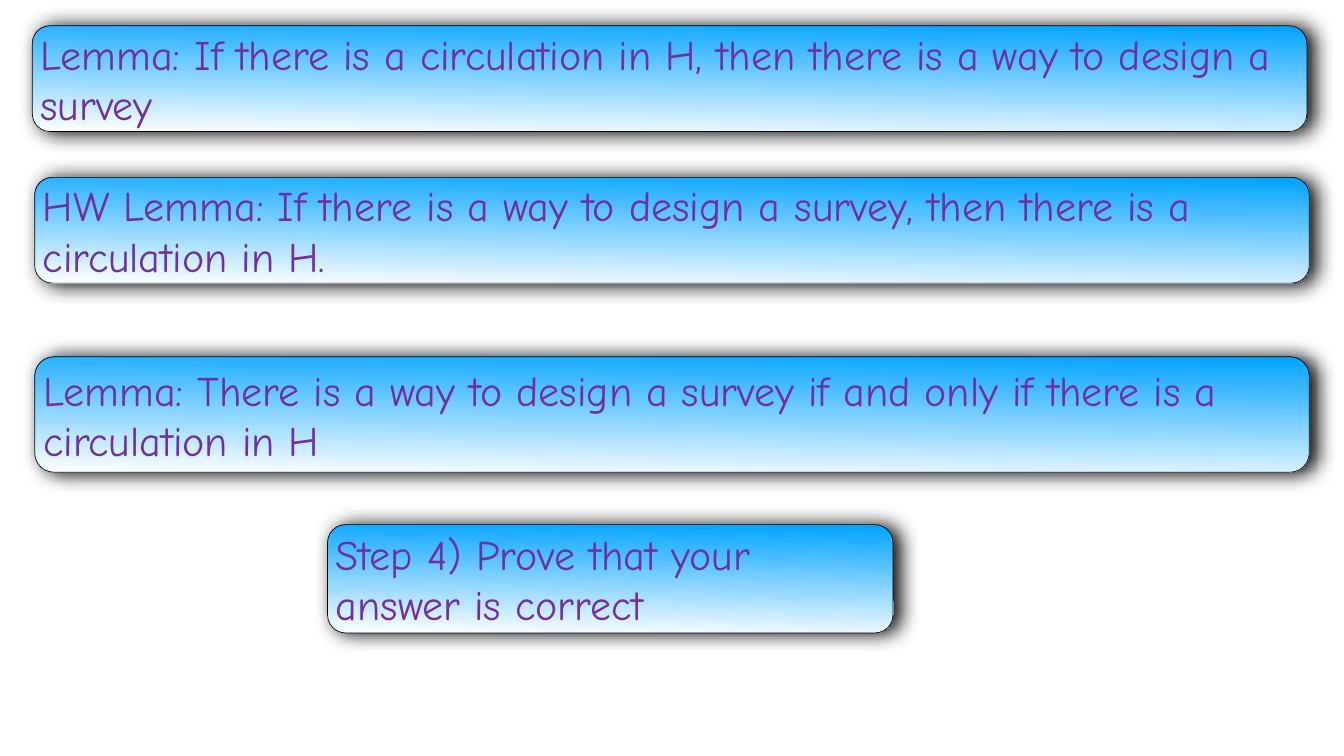
from dataclasses import dataclass

from lxml import etree
from pptx import Presentation
from pptx import util as u
from pptx.dml.color import RGBColor
from pptx.enum import shapes, text
from pptx.oxml import ns
from pptx.shapes.autoshape import Shape
from pptx.slide import Slide


@dataclass(frozen=True)
class Theme:
    font: str = "Comic Neue"
    size: int = 60
    ink: str = "7030A0"
    top: str = "00A2FF"
    base: str = "FFFFFF"
    edge: str = "000000"
    angle: int = 269
    inset: float = 0.15
    blur: int = 28
    shift: int = 9
    alpha: int = 97


@dataclass(frozen=True)
class Panel:
    words: str
    left: float
    top: float
    width: float
    height: float


THEME = Theme()
WIDE = 64.24

PANELS = [
    Panel("Lemma: If there is a circulation in H, then there is a way to design a survey",
          1.63, 1.3, WIDE, 5.33),
    Panel("HW Lemma: If there is a way to design a survey, then there is a circulation in H.",
          1.75, 8.94, WIDE, 5.33),
    Panel("Lemma: There is a way to design a survey if and only if there is a circulation in H",
          1.75, 17.98, WIDE, 5.82),
    Panel("Step 4) Prove that your answer is correct",
          16.51, 26.44, 28.5, 5.46),
]


def paint(box: Shape) -> None:
    box.fill.gradient()
    box.fill.gradient_angle = THEME.angle
    for stop, tint in zip(box.fill.gradient_stops, (THEME.top, THEME.base)):
        stop.color.rgb = RGBColor.from_string(tint)
    box.line.color.rgb = RGBColor.from_string(THEME.edge)
    box.line.width = u.Pt(1)


def shade(box: Shape) -> None:
    box.shadow.inherit = False
    effects = box.element.spPr.find(ns.qn("a:effectLst"))
    drop = etree.SubElement(effects, ns.qn("a:outerShdw"),
                            blurRad=str(u.Pt(THEME.blur)), dist=str(u.Pt(THEME.shift)),
                            dir="0", rotWithShape="0")
    tint = etree.SubElement(drop, ns.qn("a:srgbClr"), val=THEME.edge)
    etree.SubElement(tint, ns.qn("a:alpha"), val=str(THEME.alpha * 1000))


def write(box: Shape, words: str) -> None:
    frame = box.text_frame
    frame.text = words
    frame.word_wrap = True
    frame.vertical_anchor = text.MSO_ANCHOR.MIDDLE
    frame.margin_left = frame.margin_right = u.Cm(THEME.inset)
    frame.margin_top = frame.margin_bottom = u.Cm(THEME.inset)
    line = frame.paragraphs[0]
    line.alignment = text.PP_ALIGN.LEFT
    font = line.runs[0].font
    font.name = THEME.font
    font.size = u.Pt(THEME.size)
    font.color.rgb = RGBColor.from_string(THEME.ink)


def draw(slide: Slide, panel: Panel) -> None:
    box = slide.shapes.add_shape(
        shapes.MSO_SHAPE.ROUNDED_RECTANGLE,
        u.Cm(panel.left), u.Cm(panel.top), u.Cm(panel.width), u.Cm(panel.height))
    paint(box)
    shade(box)
    write(box, panel.words)


def main() -> None:
    deck = Presentation()
    deck.slide_width = u.Cm(67.74)
    deck.slide_height = u.Cm(38.1)
    slide = deck.slides.add_slide(deck.slide_layouts[6])
    for panel in PANELS:
        draw(slide, panel)
    deck.save("out.pptx")


if __name__ == "__main__":
    main()
